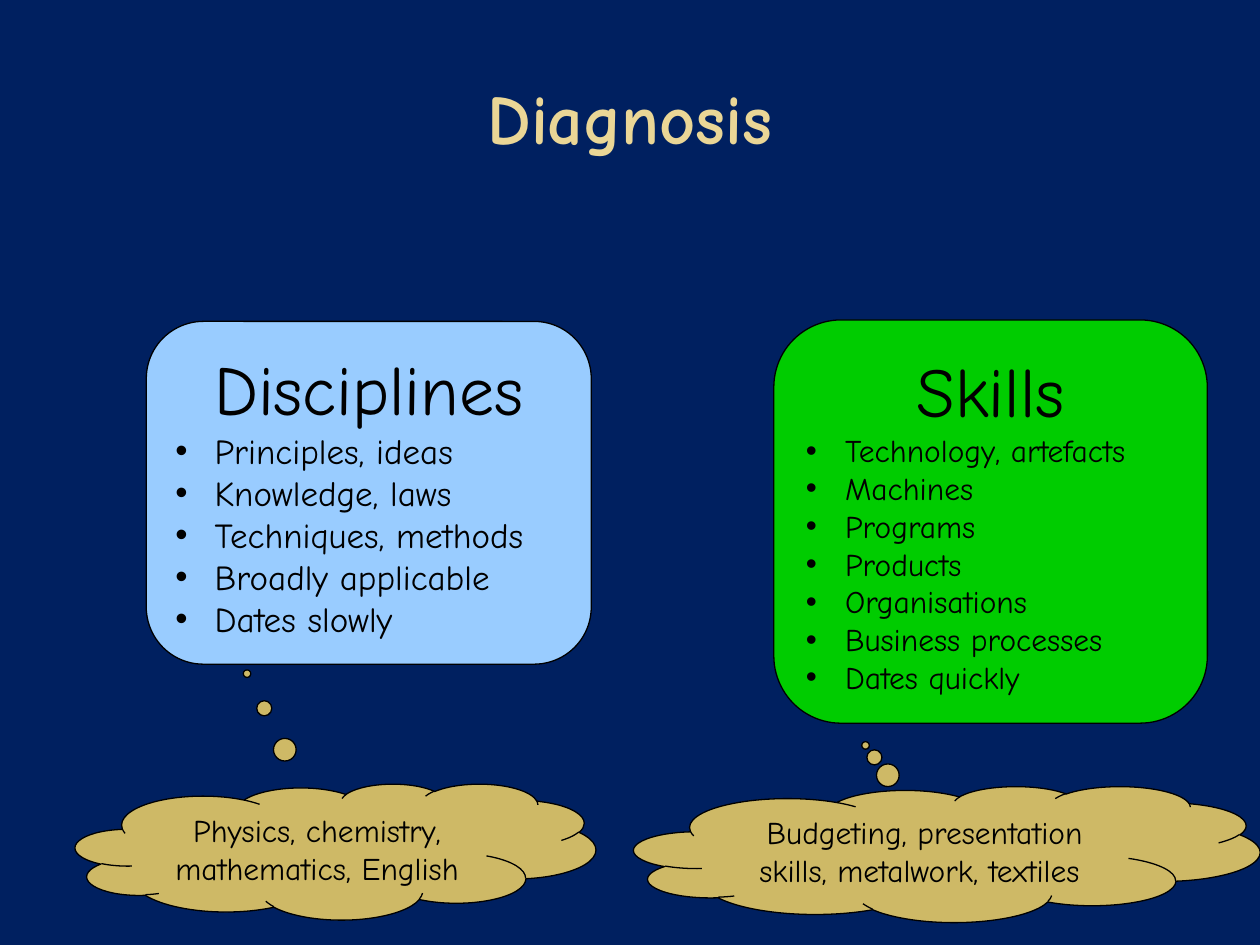
from lxml import etree
from pptx import Presentation
from pptx import util as u
from pptx.dml.color import RGBColor
from pptx.enum import shapes, text
from pptx.oxml import ns

FONT = "Comic Neue"
COLOURS = {
    "background": "002060",
    "title": "EAD696",
    "disciplines": "99CCFF",
    "skills": "00CC00",
    "cloud": "CEB966",
    "ink": "000000",
}
INDENT = u.Cm(0.79)


def colour(name):
    return RGBColor.from_string(COLOURS[name])


def write(paragraph, words, size=18, ink="ink", bold=False, centred=True,
          hanging=False, bullet=False):
    """Put one formatted run into a paragraph."""
    run = paragraph.add_run()
    run.text = words
    run.font.name = FONT
    run.font.size = u.Pt(size)
    run.font.bold = bold
    run.font.color.rgb = colour(ink)
    align = text.PP_ALIGN
    paragraph.alignment = align.CENTER if centred else align.LEFT
    properties = paragraph._p.get_or_add_pPr()
    if hanging:
        properties.set("marL", str(INDENT))
        properties.set("indent", str(-INDENT))
    if bullet:
        etree.SubElement(properties, ns.qn("a:buFont")).set("typeface", "Arial")
        etree.SubElement(properties, ns.qn("a:buChar")).set("char", "•")


def add_outlined(slide, kind, box, fill):
    shape = slide.shapes.add_shape(kind, *(u.Cm(length) for length in box))
    shape.shadow.inherit = False
    shape.fill.solid()
    shape.fill.fore_color.rgb = colour(fill)
    shape.line.color.rgb = colour("ink")
    shape.line.width = u.Pt(0.75)
    shape.text_frame.word_wrap = True
    shape.text_frame.vertical_anchor = text.MSO_ANCHOR.MIDDLE
    return shape


def add_title(slide, box, words):
    title = slide.shapes.title
    title.left, title.top, title.width, title.height = (u.Cm(n) for n in box)
    title.text_frame.vertical_anchor = text.MSO_ANCHOR.MIDDLE
    write(title.text_frame.paragraphs[0], words, size=40, ink="title", bold=True)


def add_panel(slide, box, fill, heading, points, size):
    """Rounded panel with a centred heading above a bulleted list."""
    panel = add_outlined(slide, shapes.MSO_SHAPE.ROUNDED_RECTANGLE, box, fill)
    frame = panel.text_frame
    write(frame.paragraphs[0], heading, size=40, hanging=True)
    for point in points:
        write(frame.add_paragraph(), point, size=size, centred=False,
              hanging=True, bullet=True)


def add_cloud(slide, box, pointer, words):
    """Thought cloud whose bubbles lead up to a panel."""
    cloud = add_outlined(slide, shapes.MSO_SHAPE.CLOUD_CALLOUT, box, "cloud")
    for index, offset in enumerate(pointer):
        cloud.adjustments[index] = offset
    write(cloud.text_frame.paragraphs[0], words)


def main():
    presentation = Presentation()
    presentation.slide_width = u.Cm(25.4)
    presentation.slide_height = u.Cm(19.05)
    slide = presentation.slides.add_slide(presentation.slide_layouts[5])
    slide.background.fill.solid()
    slide.background.fill.fore_color.rgb = colour("background")

    add_title(slide, (1.27, 0.76, 22.86, 3.18), "Diagnosis")

    # Panels
    add_panel(slide, (2.95, 6.48, 8.97, 6.91), "disciplines", "Disciplines",
              ["Principles, ideas", "Knowledge, laws", "Techniques, methods",
               "Broadly applicable", "Dates slowly"], size=20)
    add_panel(slide, (15.6, 6.45, 8.74, 8.13), "skills", "Skills",
              ["Technology, artefacts", "Machines", "Programs", "Products",
               "Organisations", "Business processes", "Dates quickly"], size=18)

    # Examples
    add_cloud(slide, (1.52, 15.8, 10.49, 2.74), (-0.17, -1.31),
              "Physics, chemistry, mathematics, English")
    add_cloud(slide, (12.78, 15.85, 12.62, 2.74), (-0.13, -0.8),
              "Budgeting, presentation skills, metalwork, textiles ")

    presentation.save("out.pptx")


if __name__ == "__main__":
    main()
